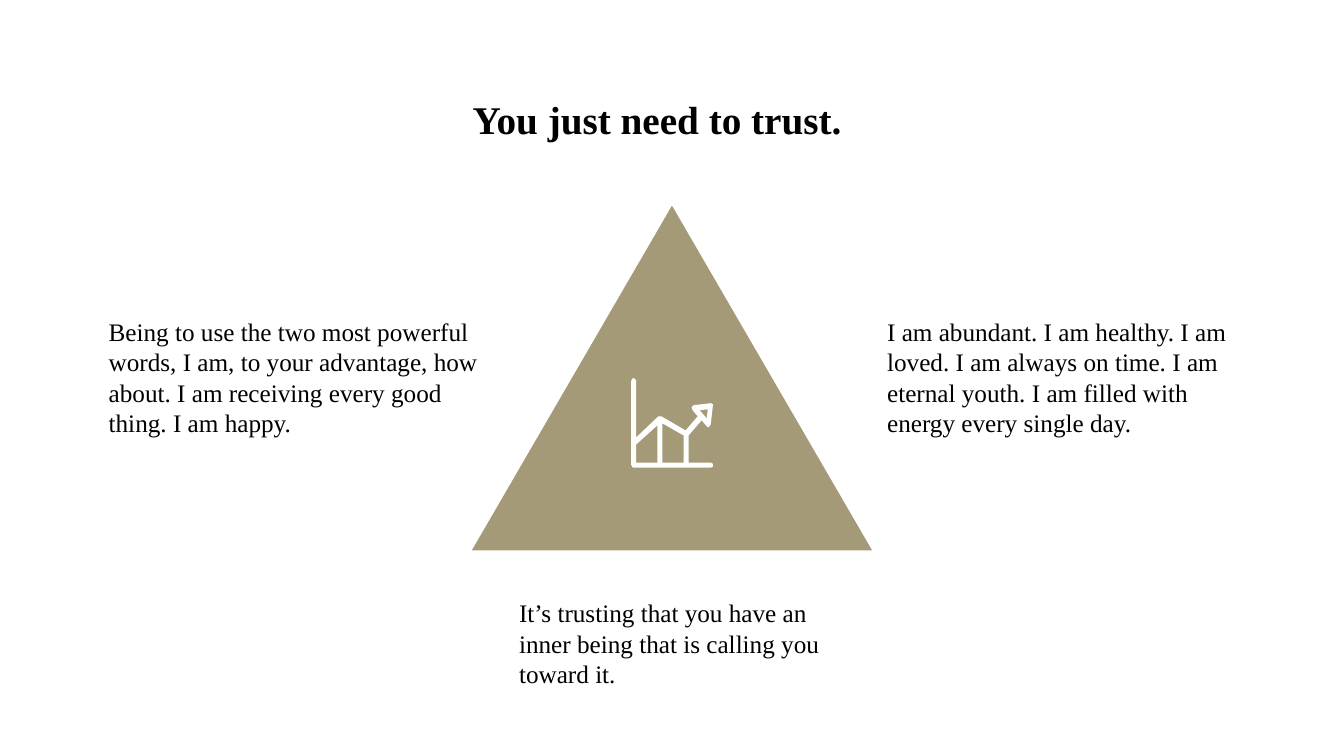
"""Build a slide with a triangle, a chart icon and three statements around it."""
import dataclasses
import typing

import pptx
import pptx.dml.color
import pptx.enum.shapes
import pptx.enum.text
import pptx.shapes.base
import pptx.slide
import pptx.util

Inches = pptx.util.Inches
Contour = list[tuple[float, float]]


@dataclasses.dataclass(frozen=True)
class Theme:
    """Colours, font and type sizes of the slide."""
    accent: str = "A59A77"
    icon: str = "FFFFFF"
    text: str = "000000"
    font: str = "Times New Roman"
    title_size: int = 28
    body_size: int = 18


class TextItem(typing.NamedTuple):
    """A text box with its place and style."""
    text: str
    left: float
    top: float
    width: float
    height: float
    size: int
    bold: bool = False
    wrap: bool = True


THEME = Theme()

TEXTS = [
    TextItem("Being to use the two most powerful words, I am, to your advantage, how about. "
             "I am receiving every good thing. I am happy.",
             0.98, 3.09, 4.06, 1.31, THEME.body_size),
    TextItem("I am abundant. I am healthy. I am loved. I am always on time. I am eternal youth. "
             "I am filled with energy every single day.",
             8.7, 3.09, 3.65, 1.31, THEME.body_size),
    TextItem("It’s trusting that you have an inner being that is calling you toward it.",
             5.05, 5.88, 3.23, 1.01, THEME.body_size),
    TextItem("You just need to trust.", 4.59, 0.9, 4.35, 0.57, THEME.title_size,
             bold=True, wrap=False),
]

ICON_OUTLINE: Contour = [
    (6.28, 3.75), (6.27, 3.76), (6.26, 3.78), (6.26, 4.61), (6.27, 4.63), (6.28, 4.64),
    (7.05, 4.64), (7.07, 4.63), (7.07, 4.6), (7.05, 4.59), (6.83, 4.59), (6.83, 4.32),
    (6.96, 4.17), (7.01, 4.23), (7.03, 4.24), (7.05, 4.21), (7.07, 4.03), (7.07, 4.01),
    (7.05, 4), (6.88, 4.02), (6.86, 4.04), (6.87, 4.07), (6.92, 4.13), (6.8, 4.27),
    (6.56, 4.13), (6.53, 4.13), (6.31, 4.34), (6.31, 3.78), (6.3, 3.76),
]
ICON_HOLES: list[Contour] = [
    [(7.02, 4.06), (7.01, 4.15), (6.94, 4.07)],
    [(6.52, 4.22), (6.52, 4.59), (6.31, 4.59), (6.31, 4.41)],
    [(6.57, 4.2), (6.78, 4.32), (6.78, 4.59), (6.57, 4.59)],
]


def paint(sp: pptx.shapes.base.BaseShape, color: str) -> None:
    """Give a shape a flat fill without line or shadow."""
    sp.shadow.inherit = False
    sp.fill.solid()
    sp.fill.fore_color.rgb = pptx.dml.color.RGBColor.from_string(color)
    sp.line.fill.background()


def add_triangle(s: pptx.slide.Slide) -> None:
    """Draw the central triangle."""
    sp = s.shapes.add_shape(pptx.enum.shapes.MSO_SHAPE.ISOSCELES_TRIANGLE,
                            Inches(4.68), Inches(2.04), Inches(3.97), Inches(3.42))
    paint(sp, THEME.accent)


def add_text(s: pptx.slide.Slide, item: TextItem) -> None:
    """Draw one text box."""
    tf = s.shapes.add_textbox(Inches(item.left), Inches(item.top),
                              Inches(item.width), Inches(item.height)).text_frame
    tf.word_wrap = item.wrap
    tf.auto_size = pptx.enum.text.MSO_AUTO_SIZE.SHAPE_TO_FIT_TEXT
    tf.text = item.text
    r = tf.paragraphs[0].runs[0]
    r.font.name = THEME.font
    r.font.size = pptx.util.Pt(item.size)
    r.font.bold = item.bold
    r.font.color.rgb = pptx.dml.color.RGBColor.from_string(THEME.text)


def add_icon(s: pptx.slide.Slide, contours: list[Contour]) -> None:
    """Draw the line chart icon as one outline with holes."""
    scaled = [[(Inches(x), Inches(y)) for x, y in contour] for contour in contours]
    builder = s.shapes.build_freeform(*scaled[0][0])
    builder.add_line_segments(scaled[0][1:], close=True)
    for hole in scaled[1:]:
        builder.move_to(*hole[0])
        builder.add_line_segments(hole[1:], close=True)
    paint(builder.convert_to_shape(), THEME.icon)


def main() -> None:
    """Build and save the slide."""
    prs = pptx.Presentation()
    prs.slide_width, prs.slide_height = Inches(13.33), Inches(7.5)
    s = prs.slides.add_slide(prs.slide_layouts[6])
    add_triangle(s)
    for item in TEXTS:
        add_text(s, item)
    add_icon(s, [ICON_OUTLINE, *ICON_HOLES])
    prs.save("out.pptx")


if __name__ == "__main__":
    main()
